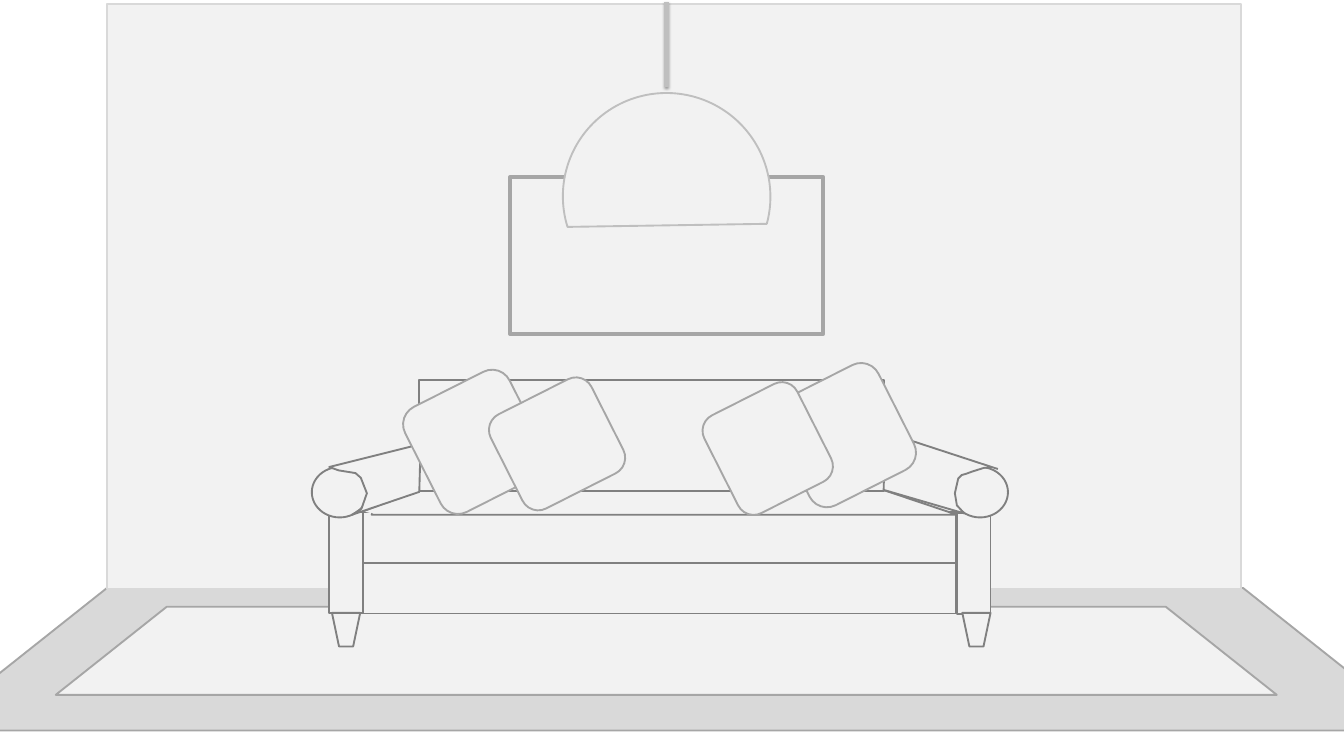
from lxml.etree import SubElement
from pptx import Presentation
from pptx.dml.color import RGBColor as RGB
from pptx.enum.shapes import MSO_CONNECTOR as Link, MSO_SHAPE as Form
from pptx.oxml.ns import qn
from pptx.util import Inches, Pt

COLORS = {
    "pale": "F2F2F2", "floor": "D9D9D9", "cord": "BFBFBF",
    "edge": "A6A6A6", "dark": "808080", "shade": "000000",
}

# Boxes are left, top, width, height in inches
FLOOR = (-1.08, 8.75, 22.25, 2.12)
RUG = (0.83, 9.03, 18.17, 1.31)
WALL = (1.59, 0.06, 16.88, 8.7)
SLANT = 1.26

# Sofa, from back to front
PANELS = [(5.4, 8.38, 8.83, 0.75), (5.4, 7.62, 8.83, 0.75)]
POSTS = [(4.9, 7.62, 0.5, 1.5), (14.24, 7.64, 0.5, 1.5)]
SEAT = [(5.4, 7.61), (6.22, 7.3), (13.17, 7.3), (14.24, 7.66),
        (5.53, 7.66), (5.54, 7.64)]
BACK = (6.24, 5.66, 6.92, 1.65)
ARM_LEFT = [(4.9, 6.95), (6.26, 6.61), (6.24, 7.32), (5.24, 7.66),
            (5.38, 7.57), (5.46, 7.34), (5.37, 7.11), (5.29, 7.04),
            (5.04, 7), (4.9, 6.95)]
ARM_RIGHT = [(14.85, 6.98), (13.17, 6.43), (13.15, 7.29), (14.35, 7.64),
             (14.24, 7.52), (14.21, 7.34), (14.26, 7.12), (14.31, 7.07),
             (14.38, 7.05), (14.46, 7.02), (14.65, 6.96), (14.72, 6.96),
             (14.74, 6.95), (14.76, 6.95)]
# Left of the arm's round front, its outline, whether the outline closes
ARMS = [(4.64, ARM_LEFT, True), (14.17, ARM_RIGHT, False)]
ROLL = (6.95, 0.83, 0.75)
LEGS = [4.94, 14.32]
LEG = (9.12, 0.42, 0.5)

FRAME = (7.59, 2.64, 4.66, 2.33)
CORD = (9.92, 0.03, 1.29)
LAMP = (8.38, 1.38, 3.08, 3.09)
LAMP_TURN = 112.4
LAMP_ARC = (30.345, 157.71)
PILLOWS = [(6.2, 5.7, 1.74, 1.75), (7.45, 5.82, 1.68, 1.57),
           (11.69, 5.6, 1.74, 1.75), (10.65, 5.86, 1.55, 1.63)]
PILLOW_TURN = 333.2


def color(name):
    return RGB.from_string(COLORS[name])


def paint(shape, line, fill="pale", width=2):
    shape.shadow.inherit = False
    shape.fill.solid()
    shape.fill.fore_color.rgb = color(fill)
    shape.line.color.rgb = color(line)
    shape.line.width = Pt(width)


def add(home, form, box, line, fill="pale", width=2, turn=0, adj=()):
    shape = home.add_shape(form, *map(Inches, box))
    paint(shape, line, fill, width)
    shape.rotation = turn
    for i, val in enumerate(adj):
        shape.adjustments[i] = val


def draw(home, points, close=False):
    """Add a sofa part with a free outline."""
    first, *rest = [(Inches(x), Inches(y)) for x, y in points]
    pen = home.build_freeform(*first)
    pen.add_line_segments(rest, close=close)
    paint(pen.convert_to_shape(), "dark")


def room(home):
    add(home, Form.TRAPEZOID, FLOOR, "edge", "floor", adj=[SLANT])
    add(home, Form.TRAPEZOID, RUG, "edge", adj=[SLANT])
    add(home, Form.RECTANGLE, WALL, "floor")


def sofa(home):
    for box in PANELS + POSTS:
        add(home, Form.RECTANGLE, box, "dark")
    draw(home, SEAT)
    add(home, Form.RECTANGLE, BACK, "dark")
    for left, points, close in ARMS:
        add(home, Form.OVAL, (left, *ROLL), "dark")
        draw(home, points, close)
    for left in LEGS:
        add(home, Form.TRAPEZOID, (left, *LEG), "dark", turn=180)


def cord(home):
    x, top, end = map(Inches, CORD)
    line = home.add_connector(Link.STRAIGHT, x, top, x, end)
    line.line.color.rgb = color("cord")
    line.line.width = Pt(4.5)
    glow = SubElement(line._element.spPr, qn("a:effectLst"))
    drop = SubElement(glow, qn("a:outerShdw"), blurRad=str(Pt(3.1)),
                      dist=str(Pt(1.6)), dir=str(90 * 60000), rotWithShape="0")
    tint = SubElement(drop, qn("a:srgbClr"), val=COLORS["shade"])
    SubElement(tint, qn("a:alpha"), val="38000")


def main():
    deck = Presentation()
    deck.slide_width, deck.slide_height = Inches(20), Inches(11.25)
    shapes = deck.slides.add_slide(deck.slide_layouts[6]).shapes
    room(shapes)
    sofa(shapes.add_group_shape().shapes)
    add(shapes, Form.RECTANGLE, FRAME, "edge", width=4.5)
    cord(shapes)
    add(shapes, Form.CHORD, LAMP, "cord", turn=LAMP_TURN, adj=LAMP_ARC)
    for box in PILLOWS:
        add(shapes, Form.ROUNDED_RECTANGLE, box, "edge", turn=PILLOW_TURN)
    deck.save("out.pptx")


if __name__ == "__main__":
    main()
